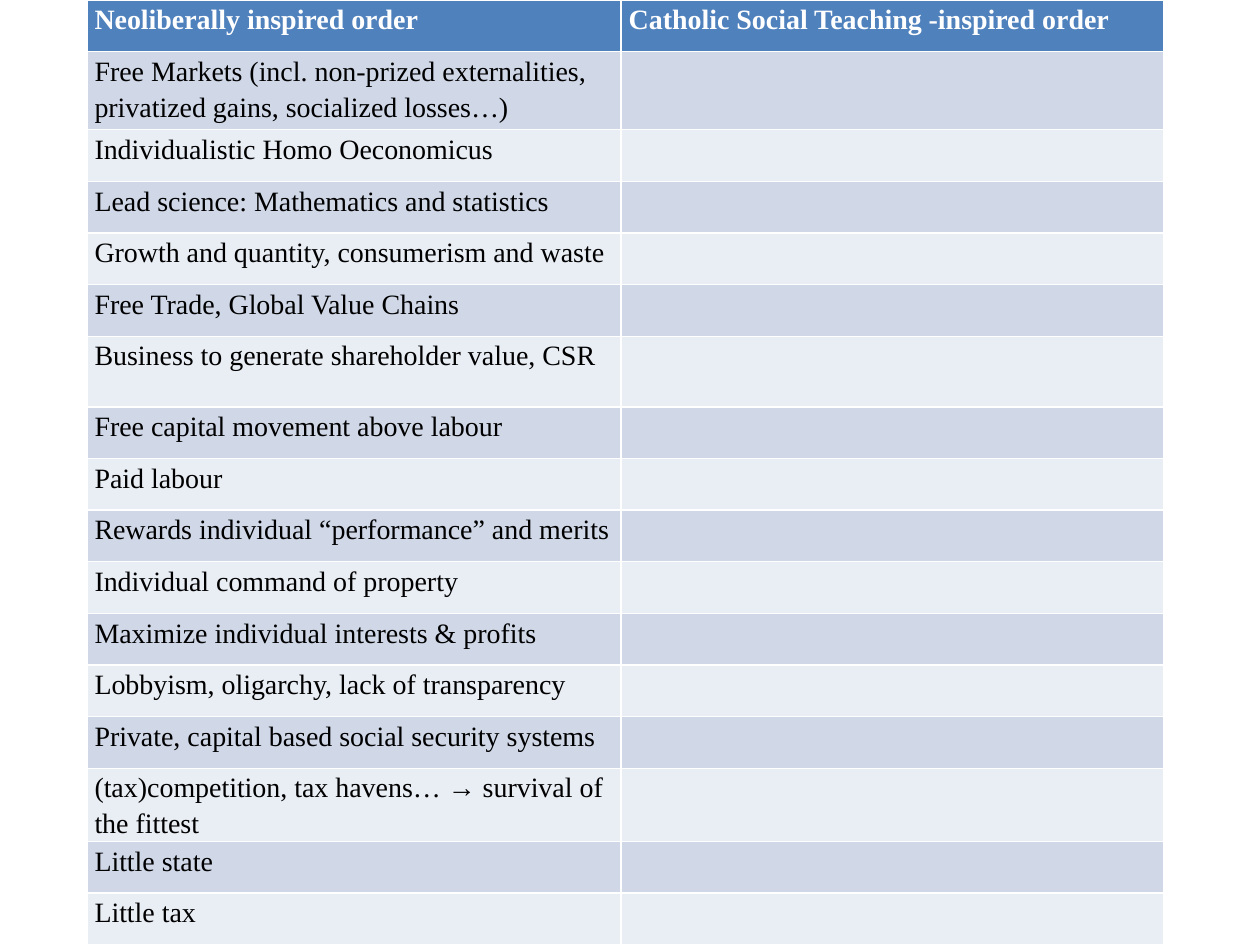
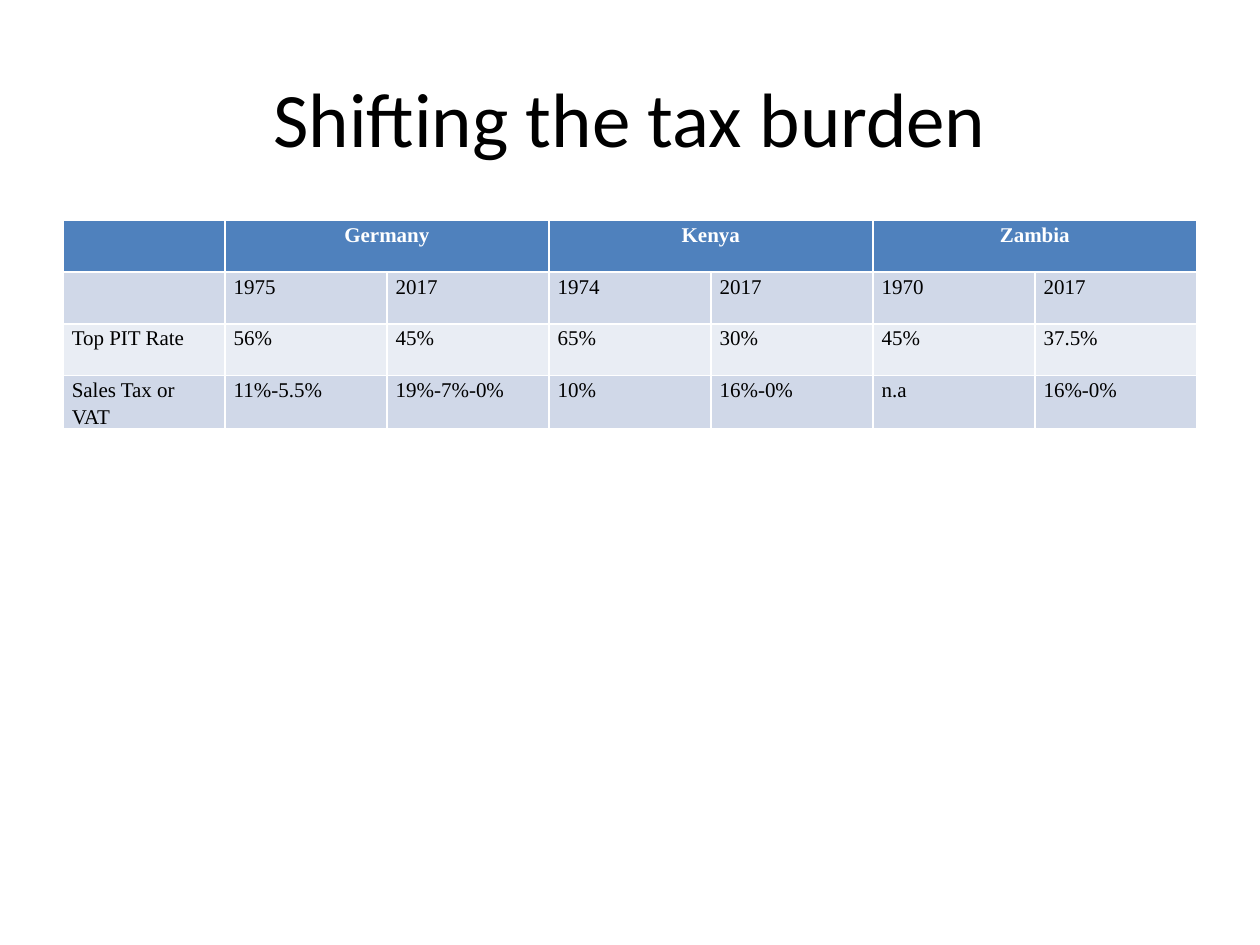
from pptx import Presentation
from pptx.dml.color import RGBColor
from pptx.enum.text import MSO_ANCHOR, PP_ALIGN
from pptx.util import Inches, Pt

# Shared style
HEADER_FILL = "4F81BD"
BAND_FILLS = ["D0D8E8", "E9EDF4"]
WHITE, BLACK = "FFFFFF", "000000"
TITLE_FONT, TABLE_FONT = "Calibri", "Times New Roman"


def format_run(run, font_name, size, color, bold=False):
    run.font.name = font_name
    run.font.size = Pt(size)
    run.font.bold = bold
    run.font.color.rgb = RGBColor.from_string(color)


def add_banded_table(slide, rows, position, column_widths, row_heights, size, margin):
    """Add a table with a header row, banded body rows and white grid lines."""
    left, top = position
    frame = slide.shapes.add_table(
        len(rows), len(column_widths), Inches(left), Inches(top),
        Inches(sum(column_widths)), Inches(sum(row_heights)))
    table = frame.table
    for column, width in zip(table.columns, column_widths):
        column.width = Inches(width)
    for row_index, (texts, height) in enumerate(zip(rows, row_heights)):
        table.rows[row_index].height = Inches(height)
        is_header = row_index == 0
        fill = HEADER_FILL if is_header else BAND_FILLS[(row_index - 1) % 2]
        for column_index, text in enumerate(texts):
            cell = table.cell(row_index, column_index)
            cell.fill.solid()
            cell.fill.fore_color.rgb = RGBColor.from_string(fill)
            cell.margin_left = cell.margin_right = Inches(margin)
            cell.margin_top = cell.margin_bottom = 0
            if not text:
                continue
            para = cell.text_frame.paragraphs[0]
            para.text = text
            para.line_spacing = 1.15
            format_run(para.runs[0], TABLE_FONT, size, WHITE if is_header else BLACK, is_header)
    return table


deck = Presentation()
deck.slide_width, deck.slide_height = Inches(10), Inches(7.5)
title_only_layout, blank_layout = deck.slide_layouts[5], deck.slide_layouts[6]

# Slide 1: two economic orders, the right column left open
neoliberal_traits = [
    "Free Markets (incl. non-prized externalities, privatized gains, socialized losses…)",
    "Individualistic Homo Oeconomicus",
    "Lead science: Mathematics and statistics",
    "Growth and quantity, consumerism and waste",
    "Free Trade, Global Value Chains",
    "Business to generate shareholder value, CSR",
    "Free capital movement above labour",
    "Paid labour",
    "Rewards individual “performance” and merits",
    "Individual command of property",
    "Maximize individual interests & profits",
    "Lobbyism, oligarchy, lack of transparency",
    "Private, capital based social security systems",
    "(tax)competition, tax havens… → survival of the fittest",
    "Little state",
    "Little tax",
]
order_rows = [["Neoliberally inspired order", "Catholic Social Teaching -inspired order"]]
order_rows += [[trait, ""] for trait in neoliberal_traits]
tall_rows = {1: 0.62, 6: 0.56, 14: 0.58}
order_heights = [tall_rows.get(index, 0.41) for index in range(len(order_rows))]

orders_slide = deck.slides.add_slide(blank_layout)
add_banded_table(orders_slide, order_rows, (0.69, 0), [4.24, 4.31], order_heights, 16, 0.06)

# Slide 2: title
tax_slide = deck.slides.add_slide(title_only_layout)
title = tax_slide.shapes.title
title.left, title.top = Inches(0.5), Inches(0.3)
title.width, title.height = Inches(9), Inches(1.25)
title.text_frame.text = "Shifting the tax burden"
title.text_frame.vertical_anchor = MSO_ANCHOR.MIDDLE
title_para = title.text_frame.paragraphs[0]
title_para.alignment = PP_ALIGN.CENTER
format_run(title_para.runs[0], TITLE_FONT, 44, BLACK)

# Slide 2: tax rates, two years for each country
tax_rows = [
    ["", "Germany", "", "Kenya", "", "Zambia", ""],
    ["", "1975", "2017", "1974", "2017", "1970", "2017"],
    ["Top PIT Rate", "56%", "45%", "65%", "30%", "45%", "37.5%"],
    ["Sales Tax or VAT", "11%-5.5%", "19%-7%-0%", "10%", "16%-0%", "n.a", "16%-0%"],
]
tax_table = add_banded_table(
    tax_slide, tax_rows, (0.5, 1.75), [9 / 7] * 7, [0.41] * len(tax_rows), 12, 0.07)
for first_column in range(1, 7, 2):
    country = tax_table.cell(0, first_column)
    country.merge(tax_table.cell(0, first_column + 1))
    country.text_frame.paragraphs[0].alignment = PP_ALIGN.CENTER

deck.save("out.pptx")
